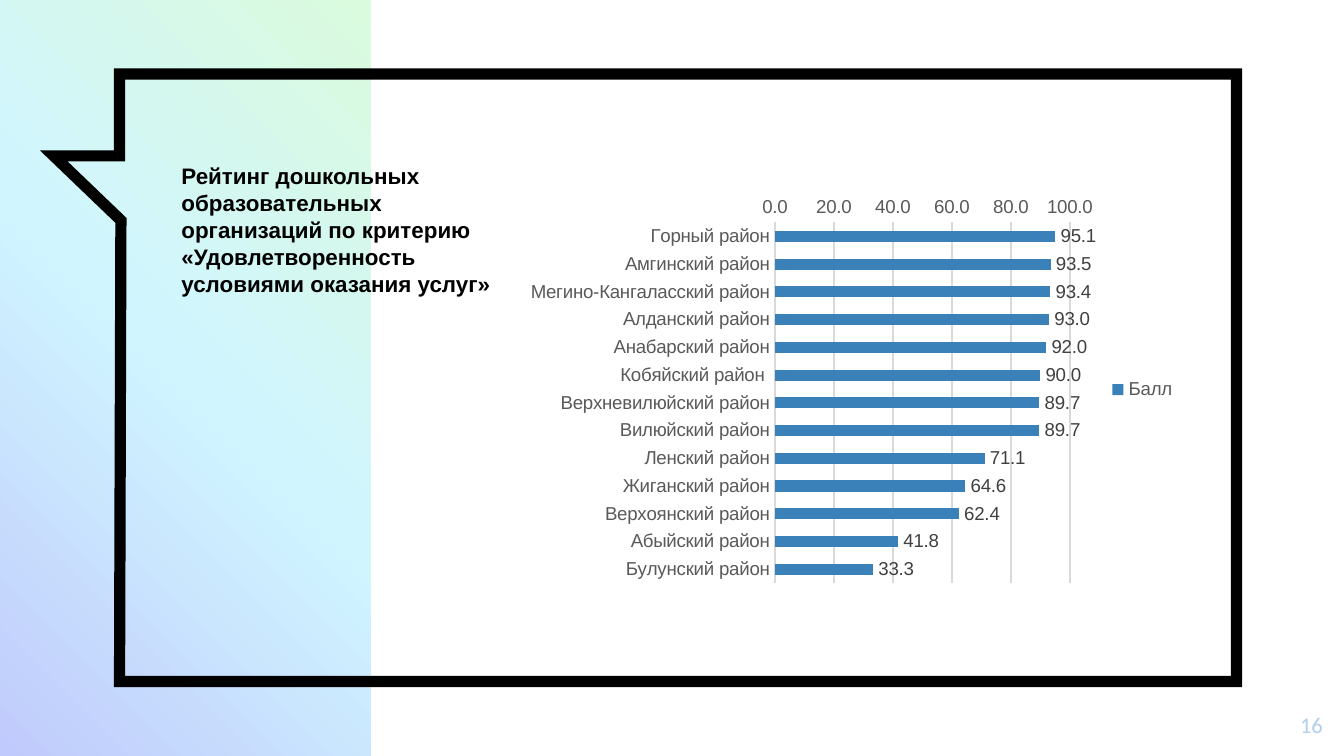
from copy import deepcopy
from dataclasses import dataclass

from pptx import Presentation
from pptx.chart.data import CategoryChartData
from pptx.dml.color import RGBColor
from pptx.enum.chart import XL_CHART_TYPE, XL_LABEL_POSITION, XL_LEGEND_POSITION, XL_TICK_MARK
from pptx.enum.shapes import MSO_SHAPE
from pptx.enum.text import MSO_ANCHOR, MSO_AUTO_SIZE, PP_ALIGN
from pptx.oxml.ns import qn
from pptx.util import Inches, Pt


@dataclass(frozen=True)
class Theme:
    font: str = "Arial"
    num_font: str = "Calibri"
    ink: str = "000000"
    axis: str = "595959"
    label: str = "404040"
    grid: str = "D9D9D9"
    bar: str = "3A81BA"
    page: str = "AFCFEC"
    fade: tuple = ("C0CAFC", "D0F5FF", "DAFBDD")
    head: int = 12
    small: int = 10
    frame: float = 6
    hair: float = 0.75


THEME = Theme()
WIDE = 10
HIGH = WIDE * 9 / 16
TITLE = ("Рейтинг дошкольных образовательных организаций по критерию "
         "«Удовлетворенность условиями оказания услуг»")
SCORES = {
    "Горный район": 95.1,
    "Амгинский район": 93.5,
    "Мегино-Кангаласский район": 93.4,
    "Алданский район": 93.0,
    "Анабарский район": 92.0,
    "Кобяйский район ": 90.0,
    "Верхневилюйский район": 89.7,
    "Вилюйский район": 89.7,
    "Ленский район": 71.1,
    "Жиганский район": 64.6,
    "Верхоянский район": 62.4,
    "Абыйский район": 41.8,
    "Булунский район": 33.3,
}


def rgb(code):
    return RGBColor.from_string(code)


def style(font, size, color, name=THEME.font, bold=False):
    font.size, font.name, font.bold = Pt(size), name, bold
    font.color.rgb = rgb(color)


def stroke(line, color, width):
    line.color.rgb = rgb(color)
    line.width = Pt(width)


def place(shape, box):
    shape.left, shape.top, shape.width, shape.height = map(Inches, box)


def add_band(slide, box):
    """Draw the side band, fading from bottom left to top right."""
    band = slide.shapes.add_shape(MSO_SHAPE.RECTANGLE, *map(Inches, box))
    band.shadow.inherit = False
    band.line.fill.background()
    band.fill.gradient()
    band.fill.gradient_angle = 45
    stops = band._element.spPr.find(qn("a:gradFill")).find(qn("a:gsLst"))
    stops.insert(1, deepcopy(stops[0]))
    for i, (stop, color) in enumerate(zip(band.fill.gradient_stops, THEME.fade)):
        stop.position = i / 2
        stop.color.rgb = rgb(color)


def add_bubble(slide, box):
    """Outline a speech bubble whose tail points left."""
    x, y, w, h = box
    tail, top, low = 0.49, 0.61, 1.09
    points = [(tail, 0), (w, 0), (w, h), (tail, h), (tail + 0.01, low), (0, top), (tail, top)]
    (x0, y0), *rest = [(Inches(x + dx), Inches(y + dy)) for dx, dy in points]
    path = slide.shapes.build_freeform(x0, y0)
    path.add_line_segments(rest, close=True)
    bubble = path.convert_to_shape()
    bubble.shadow.inherit = False
    bubble.fill.background()
    stroke(bubble.line, THEME.ink, THEME.frame)
    line = bubble._element.spPr.find(qn("a:ln"))
    line.append(line.makeelement(qn("a:miter"), {"lim": "800000"}))


def add_title(slide, box):
    title = slide.shapes.title
    place(title, box)
    frame = title.text_frame
    frame.word_wrap = True
    frame.auto_size = MSO_AUTO_SIZE.SHAPE_TO_FIT_TEXT
    frame.vertical_anchor = MSO_ANCHOR.TOP
    para = frame.paragraphs[0]
    para.alignment = PP_ALIGN.LEFT
    para.line_spacing = 1.0
    run = para.add_run()
    run.text = TITLE
    style(run.font, THEME.head, THEME.ink, bold=True)


def add_number(slide, box, number):
    frame = slide.shapes.add_textbox(*map(Inches, box)).text_frame
    frame.word_wrap = True
    frame.margin_top = frame.margin_bottom = Inches(0.1)
    para = frame.paragraphs[0]
    para.alignment = PP_ALIGN.RIGHT
    run = para.add_run()
    run.text = str(number)
    style(run.font, THEME.head, THEME.page, THEME.num_font)


def add_scores(slide, box):
    data = CategoryChartData(number_format="0.0")
    data.categories = list(SCORES)
    data.add_series("Балл", list(SCORES.values()))
    chart = slide.shapes.add_chart(XL_CHART_TYPE.BAR_CLUSTERED, *map(Inches, box), data).chart
    style(chart.font, THEME.small, THEME.ink)
    chart.has_title = False

    chart.has_legend = True
    chart.legend.position = XL_LEGEND_POSITION.RIGHT
    chart.legend.include_in_layout = False
    style(chart.legend.font, THEME.small, THEME.axis)

    names, scale = chart.category_axis, chart.value_axis
    for axis in (names, scale):
        axis.major_tick_mark = axis.minor_tick_mark = XL_TICK_MARK.NONE
        style(axis.tick_labels.font, THEME.small, THEME.axis)
    names.reverse_order = True
    stroke(names.format.line, THEME.grid, THEME.hair)
    scale.minimum_scale, scale.maximum_scale, scale.major_unit = 0, 100, 20
    scale.format.line.fill.background()
    scale.has_major_gridlines = True
    stroke(scale.major_gridlines.format.line, THEME.grid, THEME.hair)
    scale.tick_labels.number_format = "0.0"
    scale.tick_labels.number_format_is_linked = False

    plot = chart.plots[0]
    plot.gap_width = 150
    plot.vary_by_categories = False
    bars = plot.series[0]
    bars.format.fill.solid()
    bars.format.fill.fore_color.rgb = rgb(THEME.bar)
    labels = bars.data_labels
    labels.show_value = True
    labels.position = XL_LABEL_POSITION.OUTSIDE_END
    labels.number_format = "0.0"
    labels.number_format_is_linked = False
    style(labels.font, THEME.small, THEME.label)


def main():
    deck = Presentation()
    deck.slide_width, deck.slide_height = Inches(WIDE), Inches(HIGH)
    slide = deck.slides.add_slide(deck.slide_layouts[5])
    add_band(slide, (0, 0, 2.76, HIGH))
    add_bubble(slide, (0.4, 0.55, 8.8, 4.52))
    add_number(slide, (9.34, 5.19, 0.6, 0.43), 16)
    add_title(slide, (1.25, 1.16, 2.76, 1.11))
    # Lift the title above the band and the bubble
    slide.shapes._spTree.append(slide.shapes.title._element)
    add_scores(slide, (3.85, 1.4, 5, 3))
    deck.save("out.pptx")


if __name__ == "__main__":
    main()
